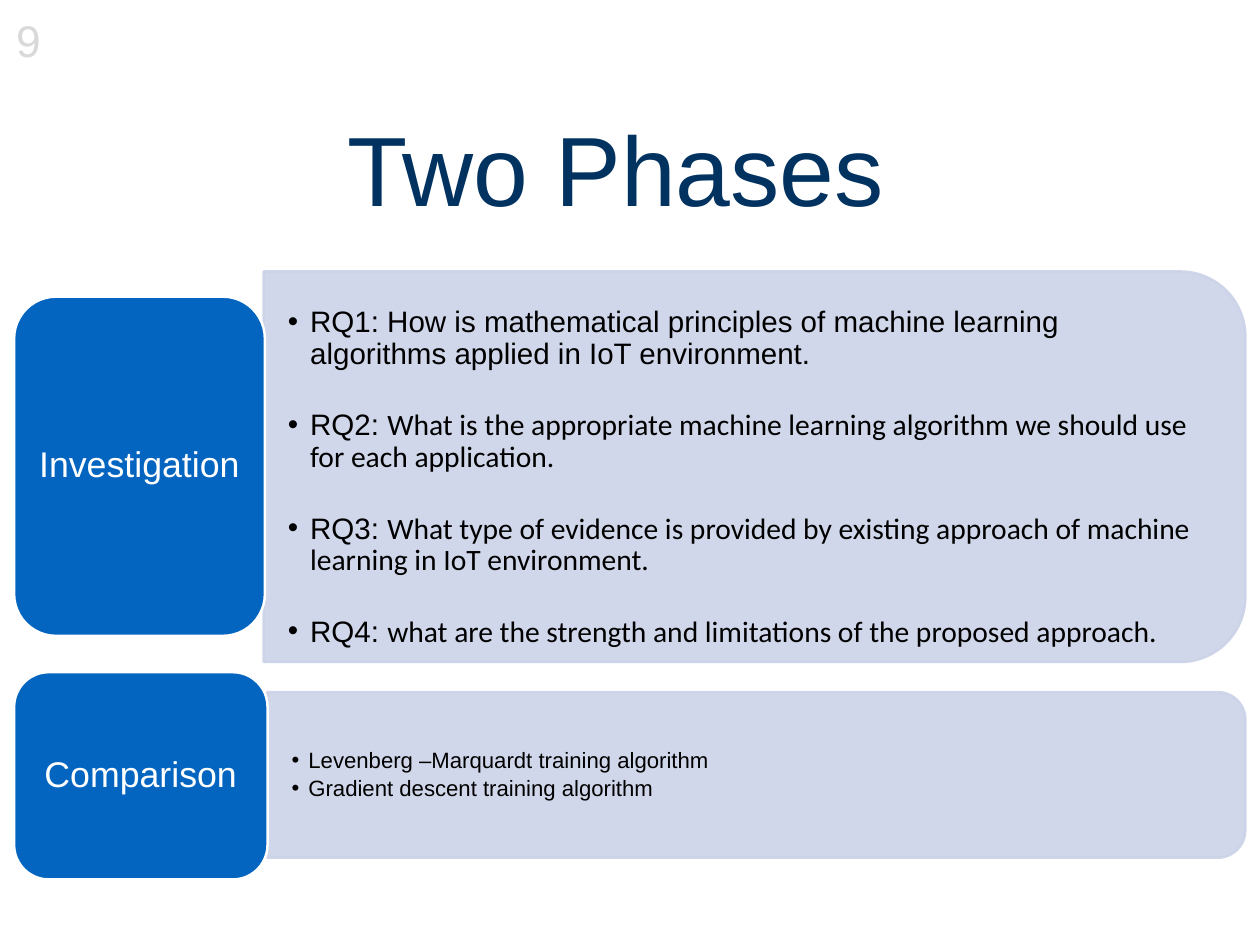
from dataclasses import dataclass

from lxml import etree
from pptx import Presentation
from pptx.dml.color import RGBColor
from pptx.enum.shapes import MSO_SHAPE
from pptx.enum.text import MSO_ANCHOR, MSO_AUTO_SIZE, PP_ALIGN
from pptx.oxml.ns import qn
from pptx.util import Pt

PX = 9144  # 100 px to the inch
NAVY = RGBColor(0x01, 0x32, 0x60)
BLUE = RGBColor(0x03, 0x65, 0xC0)
PALE = RGBColor(0xCC, 0xD3, 0xE8)
GREY = RGBColor(0xD9, 0xD9, 0xD9)
WHITE = RGBColor(0xFF, 0xFF, 0xFF)
BLACK = RGBColor(0x00, 0x00, 0x00)
ROUND = MSO_SHAPE.ROUNDED_RECTANGLE
ROUND_TOP = MSO_SHAPE.ROUND_2_SAME_RECTANGLE
CENTER = PP_ALIGN.CENTER
LEFT = PP_ALIGN.LEFT
TOP = MSO_ANCHOR.TOP
MIDDLE = MSO_ANCHOR.MIDDLE
NO_FIT = MSO_AUTO_SIZE.NONE
TWO_CONTENT = 3


@dataclass
class Box:
    left: int
    top: int
    width: int
    height: int

    def emu(self) -> tuple[int, ...]:
        return tuple(v * PX for v in (self.left, self.top, self.width, self.height))

    def turned(self) -> "Box":
        """The unrotated box that covers this one after a quarter turn."""
        shift = (self.width - self.height) // 2
        return Box(self.left + shift, self.top - shift, self.height, self.width)


@dataclass
class Phase:
    name: str
    label: Box
    panel: Box
    body: Box
    anchor: MSO_ANCHOR
    inset: int
    size: int
    hang: int
    gap: int
    items: list[list[tuple[str, str]]]


PHASES = [
    Phase("Investigation", Box(16, 335, 283, 383), Box(298, 306, 1108, 441),
          Box(298, 327, 1086, 398), TOP, 20, 24, 25, 32, [
        [("RQ1: How is mathematical principles of machine learning "
          "algorithms applied in IoT environment.", "Arial")],
        [("RQ2: ", "Arial"),
         ("What is the appropriate machine learning algorithm we should use "
          "for each application.", "Calibri")],
        [("RQ3: ", "Arial"),
         ("What type of evidence is provided by existing approach of machine "
          "learning in IoT environment.", "Calibri")],
        [("RQ4: ", "Arial"),
         ("what are the strength and limitations of the proposed approach.",
          "Calibri")],
    ]),
    Phase("Comparison", Box(16, 759, 286, 234), Box(302, 781, 1104, 187),
          Box(302, 791, 1095, 169), MIDDLE, 14, 18, 19, 3, [
        [("Levenberg –Marquardt training algorithm", "Arial")],
        [("Gradient descent training algorithm", "Arial")],
    ]),
]


def place(s, box: Box) -> None:
    s.left, s.top, s.width, s.height = box.emu()


def set_insets(tf, side: int, edge: int) -> None:
    tf.margin_left = tf.margin_right = side * PX
    tf.margin_top = tf.margin_bottom = edge * PX


def style(r, size: int, color: RGBColor, font: str = "Arial") -> None:
    r.font.size = Pt(size)
    r.font.name = font
    r.font.color.rgb = color


def add_block(slide, kind, box: Box, fill: RGBColor, line: RGBColor):
    s = slide.shapes.add_shape(kind, *box.emu())
    s.shadow.inherit = False
    s.fill.solid()
    s.fill.fore_color.rgb = fill
    s.line.color.rgb = line
    s.line.width = Pt(2)
    return s


def add_panel(slide, box: Box) -> None:
    s = add_block(slide, ROUND_TOP, box.turned(), PALE, PALE)
    s.rotation = 90
    for clr in s._element.spPr.iter(qn("a:srgbClr")):
        etree.SubElement(clr, qn("a:alpha"), val="90000")


def add_label(slide, phase: Phase) -> None:
    s = add_block(slide, ROUND, phase.label, BLUE, WHITE)
    tf = s.text_frame
    tf.text = phase.name
    tf.word_wrap = True
    tf.vertical_anchor = MIDDLE
    set_insets(tf, 12, 6)
    p = tf.paragraphs[0]
    p.alignment = CENTER
    p.line_spacing = 0.9
    style(p.runs[0], 29, WHITE)


def fill_list(slide, ph, phase: Phase) -> None:
    place(ph, phase.body)
    slide.shapes._spTree.append(ph._element)  # in front of its panel
    tf = ph.text_frame
    tf.auto_size = NO_FIT
    tf.word_wrap = True
    tf.vertical_anchor = phase.anchor
    set_insets(tf, 27, phase.inset)
    for i, item in enumerate(phase.items):
        p = tf.add_paragraph() if i else tf.paragraphs[0]
        p.alignment = LEFT
        p.line_spacing = 0.9
        p.space_before = Pt(0)
        p.space_after = Pt(phase.gap if i < len(phase.items) - 1 else 0)
        pPr = p._p.get_or_add_pPr()
        pPr.set("marL", str(phase.hang * PX))
        pPr.set("indent", str(-phase.hang * PX))
        for text, font in item:
            r = p.add_run()
            r.text = text
            style(r, phase.size, BLACK, font)


def set_title(s) -> None:
    place(s, Box(88, 71, 1214, 236))
    tf = s.text_frame
    tf.text = "Two Phases"
    tf.auto_size = NO_FIT
    tf.vertical_anchor = MIDDLE
    set_insets(tf, 0, 0)
    p = tf.paragraphs[0]
    p.alignment = CENTER
    style(p.runs[0], 80, NAVY)


def add_page_number(slide) -> None:
    s = slide.shapes.add_textbox(*Box(8, 10, 48, 71).emu())
    tf = s.text_frame
    tf.text = "9"
    tf.word_wrap = False
    p = tf.paragraphs[0]
    p.alignment = CENTER
    style(p.runs[0], 36, GREY)


def main() -> None:
    prs = Presentation()
    prs.slide_width, prs.slide_height = 1422 * PX, 1067 * PX
    slide = prs.slides.add_slide(prs.slide_layouts[TWO_CONTENT])
    title, *bodies = slide.placeholders
    set_title(title)
    for phase, body in zip(PHASES, bodies):
        add_panel(slide, phase.panel)
        fill_list(slide, body, phase)
        add_label(slide, phase)
    add_page_number(slide)
    prs.save("out.pptx")


if __name__ == "__main__":
    main()
